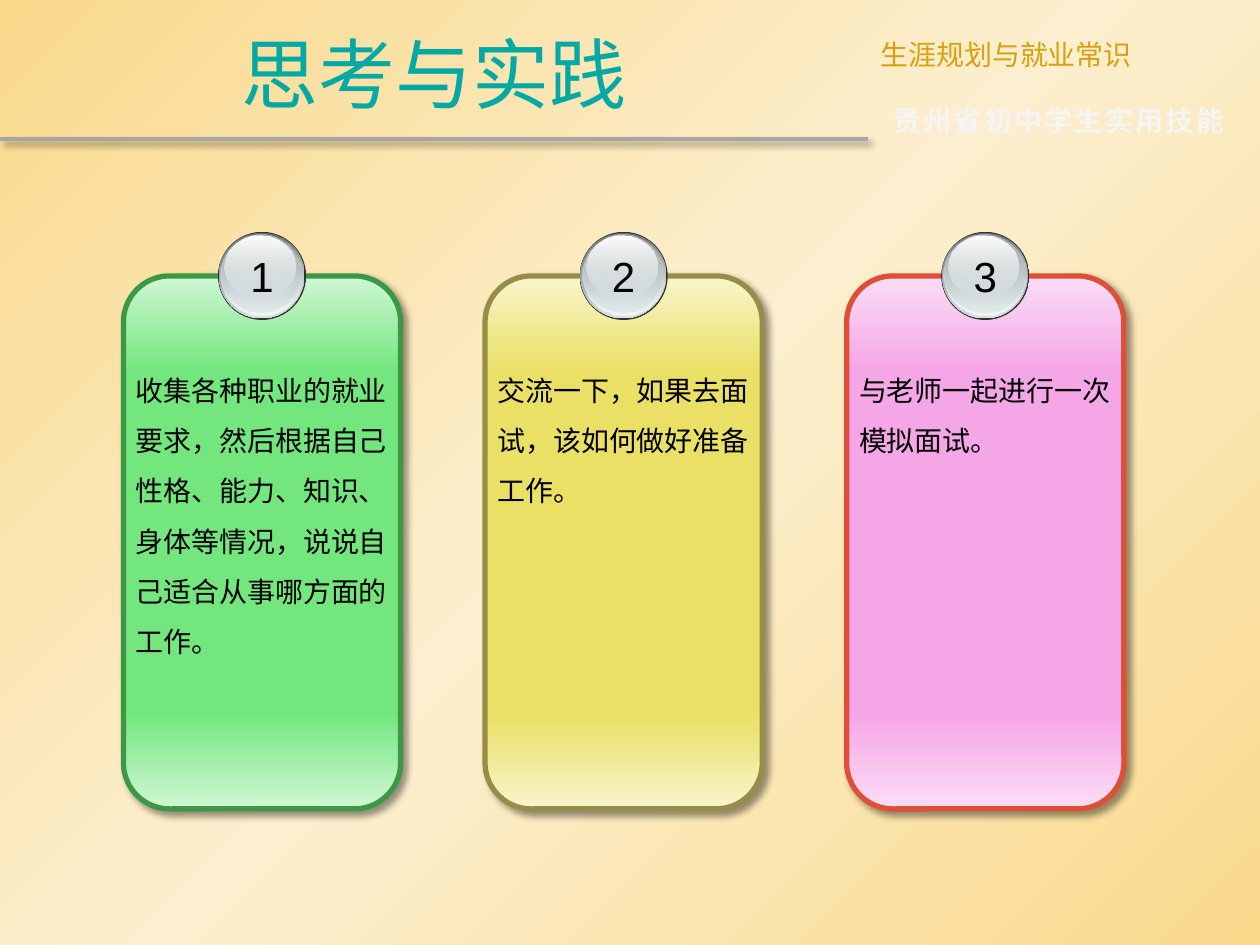
from lxml.etree import SubElement
from pptx import Presentation
from pptx.dml.color import RGBColor
from pptx.enum.shapes import MSO_CONNECTOR, MSO_SHAPE
from pptx.enum.text import MSO_ANCHOR, MSO_AUTO_SIZE, PP_ALIGN
from pptx.oxml.ns import qn
from pptx.util import Inches, Pt

WIDTH, HEIGHT = 10, 7.5
HAN, LATIN = "Noto Sans CJK SC", "Arial"

# Card grid
CARD_LEFT, CARD_TOP, CARD_WIDTH, CARD_HEIGHT = 0.98, 1.84, 2.2, 4.58
CARD_PITCH = 2.87
BADGE_SIZE = 0.7

# Number, text, text height, edge tint, body tint, border
CARDS = [
    ("1", "收集各种职业的就业要求，然后根据自己性格、能力、知识、身体等情况，说说自己适合从事哪方面的工作。",
     2.52, "D0F7D4", "73E77E", "3C9844"),
    ("2", "交流一下，如果去面试，该如何做好准备工作。",
     1.31, "F8F5CC", "E9E065", "978D48"),
    ("3", "与老师一起进行一次模拟面试。",
     0.91, "FBDDF5", "F4A6E6", "DD4F37"),
]

# Badge rings as shares of the badge, with (position, colour, opacity) stops
RINGS = [
    ((0, 0, 1, 1), [(0, "333333", 100), (100, "333333", 100)]),
    ((0.01, 0.01, 0.97, 0.97), [(0, "636869", 100), (100, "D6E1E2", 100)]),
    ((0.03, 0.01, 0.94, 0.94), [(0, "D6E1E2", 0), (100, "F1F5F5", 100)]),
    ((0.04, 0.03, 0.9, 0.89), [(0, "AAB2B3", 100), (100, "D6E1E2", 48)]),
    ((0.08, 0.04, 0.8, 0.71), [(0, "FFFFFF", 100), (100, "D6E1E2", 38)]),
]


def color(value):
    return RGBColor.from_string(value)


def inches(box):
    return [Inches(length) for length in box]


def within(box, shares):
    left, top, width, height = box
    x, y, w, h = shares
    return left + x * width, top + y * height, w * width, h * height


def add_color(parent, value, opacity):
    tint = SubElement(parent, qn("a:srgbClr"), val=value)
    if opacity < 100:
        SubElement(tint, qn("a:alpha"), val=str(opacity * 1000))


def paint_gradient(fill, element, stops, angle):
    fill.gradient()
    gradient = element.find(".//" + qn("a:gradFill"))
    for child in list(gradient):
        gradient.remove(child)
    stop_list = SubElement(gradient, qn("a:gsLst"))
    for position, value, opacity in stops:
        stop = SubElement(stop_list, qn("a:gs"), pos=str(position * 1000))
        add_color(stop, value, opacity)
    SubElement(gradient, qn("a:lin"), ang=str(angle * 60000), scaled="0")


def add_shadow(part):
    properties = part._element.spPr
    effects = properties.find(qn("a:effectLst"))
    if effects is None:
        effects = SubElement(properties, qn("a:effectLst"))
    shadow = SubElement(effects, qn("a:outerShdw"), blurRad=str(Pt(4)), dist=str(Pt(3)),
                        dir=str(45 * 60000), algn="tl", rotWithShape="0")
    add_color(shadow, "000000", 40)


def add_text(shapes, box, text, size, value, font=HAN, align=PP_ALIGN.LEFT, wrap=True,
             grow=True, anchor=MSO_ANCHOR.TOP, line_spacing=None, bold=False, tracking=0):
    frame = shapes.add_textbox(*inches(box)).text_frame
    frame.word_wrap = wrap
    frame.auto_size = MSO_AUTO_SIZE.SHAPE_TO_FIT_TEXT if grow else MSO_AUTO_SIZE.NONE
    frame.vertical_anchor = anchor
    paragraph = frame.paragraphs[0]
    paragraph.text = text
    paragraph.alignment = align
    if line_spacing:
        paragraph.line_spacing = line_spacing
    paragraph.font.size = Pt(size)
    paragraph.font.name = font
    paragraph.font.bold = bold
    paragraph.font.color.rgb = color(value)
    defaults = paragraph._p.pPr.find(qn("a:defRPr"))
    SubElement(defaults, qn("a:ea"), typeface=font)
    if tracking:
        defaults.set("spc", str(int(tracking * 100)))


def add_gradient_shape(shapes, preset, box, stops):
    shape = shapes.add_shape(preset, *inches(box))
    shape.shadow.inherit = False
    paint_gradient(shape.fill, shape._element, stops, 90)
    shape.line.fill.background()
    return shape


def build_header(slide, box):
    left, top, width, height = box
    title_width = 0.689 * width
    side_left, side_width = left + title_width, width - title_width

    # Rule under the title
    rule_y = Inches(top + height)
    rule = slide.shapes.add_connector(MSO_CONNECTOR.STRAIGHT, Inches(left), rule_y,
                                      Inches(side_left), rule_y)
    rule.line.color.rgb = color("A6A6A6")
    rule.line.width = Pt(2.25)
    add_shadow(rule)

    # Course name, series name and title
    add_text(slide.shapes, (side_left, top + 0.25, side_width, 0.37), "生涯规划与就业常识",
             16, "DC9F0C", align=PP_ALIGN.JUSTIFY)
    add_text(slide.shapes, (side_left + 0.1, top + 0.77, side_width - 0.1, 0.37),
             "贵州省初中学生实用技能", 16, "F5F5F5", bold=True, tracking=1.4)
    add_text(slide.shapes, (left, top + 0.07, title_width, 1.02), "思考与实践", 44, "04A8A4",
             align=PP_ALIGN.CENTER, grow=False, anchor=MSO_ANCHOR.MIDDLE)


def build_badge(shapes, box, number):
    for shares, stops in RINGS:
        add_gradient_shape(shapes, MSO_SHAPE.OVAL, within(box, shares), stops)
    add_text(shapes, within(box, (0.22, 0.14, 0.56, 0.71)), number, 24, "000000",
             font=LATIN, align=PP_ALIGN.CENTER, wrap=False)


def build_card(slide, box, number, text, text_height, edge, body, border):
    left, top, width, height = box
    shapes = slide.shapes.add_group_shape().shapes

    # Panel hangs from the middle of the badge
    drop = BADGE_SIZE / 2
    tints = [(0, edge), (18, body), (82, body), (100, edge)]
    panel = add_gradient_shape(shapes, MSO_SHAPE.ROUNDED_RECTANGLE,
                               (left, top + drop, width, height - drop),
                               [(position, tint, 100) for position, tint in tints])
    panel.line.color.rgb = color(border)
    panel.line.width = Pt(3)
    add_shadow(panel)

    add_text(shapes, (left, top + 0.94, width, text_height), text, 16, "000000",
             line_spacing=1.5)
    build_badge(shapes, (left + (width - BADGE_SIZE) / 2, top, BADGE_SIZE, BADGE_SIZE), number)


def main():
    deck = Presentation()
    deck.slide_width, deck.slide_height = Inches(WIDTH), Inches(HEIGHT)
    slide = deck.slides.add_slide(deck.slide_layouts[6])
    paint_gradient(slide.background.fill, slide._element,
                   [(0, "F9D98C", 100), (50, "FCEFCF", 100), (100, "F9D98C", 100)], 45)
    build_header(slide, (0, 0, WIDTH, 1.1))
    for column, card in enumerate(CARDS):
        box = (CARD_LEFT + column * CARD_PITCH, CARD_TOP, CARD_WIDTH, CARD_HEIGHT)
        build_card(slide, box, *card)
    deck.save("out.pptx")


if __name__ == "__main__":
    main()
